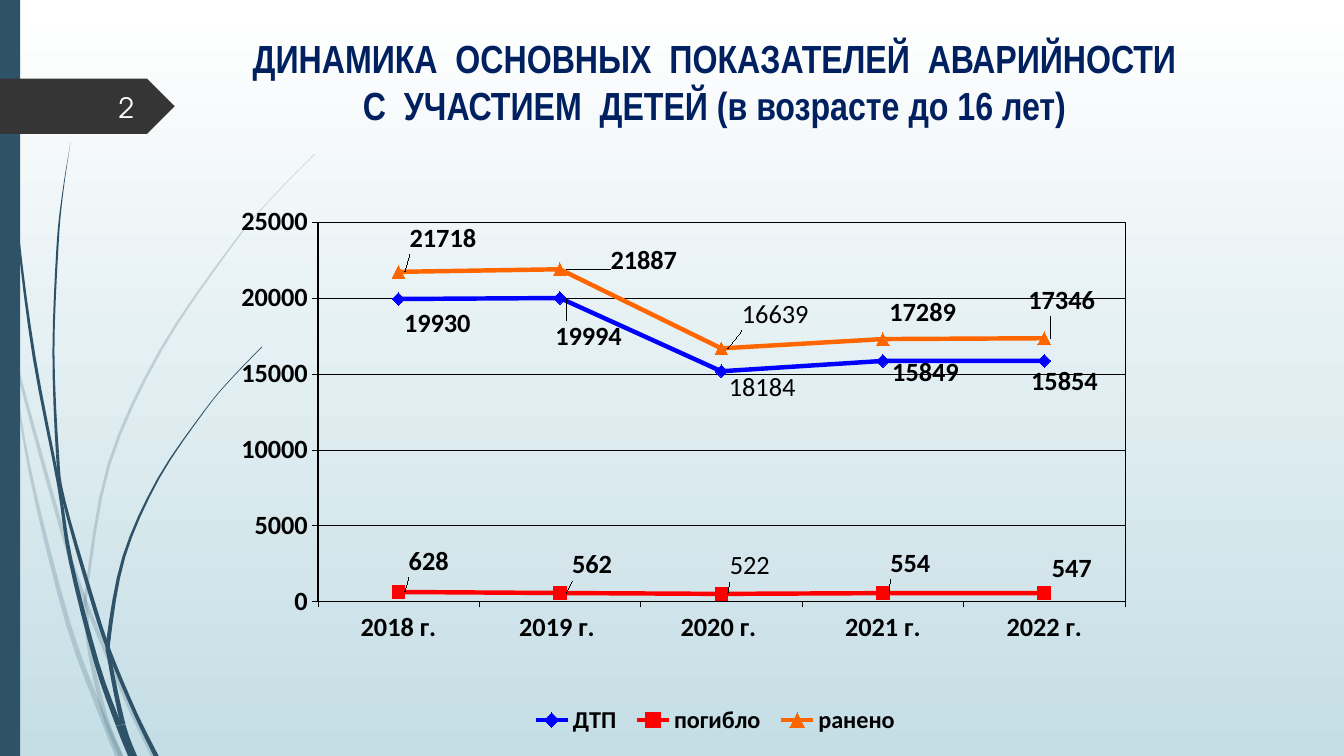
from lxml import etree
from pptx import Presentation
from pptx.chart.data import CategoryChartData
from pptx.dml.color import RGBColor
from pptx.enum.chart import XL_CHART_TYPE as ChartType, XL_LABEL_POSITION as LabelPosition
from pptx.enum.chart import XL_LEGEND_POSITION as LegendPosition, XL_MARKER_STYLE as Marker
from pptx.enum.chart import XL_TICK_MARK as TickMark
from pptx.enum.shapes import MSO_SHAPE as Shape
from pptx.enum.text import MSO_ANCHOR as Anchor, PP_ALIGN as Align
from pptx.oxml import parse_xml
from pptx.oxml.ns import nsdecls, qn
from pptx.util import Inches, Pt

WIDTH, HEIGHT = Inches(13.33), Inches(7.5)
CELL = Inches(1)  # grid cell for the curved stems
STEPS = 4  # straight pieces between two knots

WHITE = RGBColor(0xFF, 0xFF, 0xFF)
MIST = RGBColor(0xC5, 0xDE, 0xE5)
SLATE = RGBColor(0x2E, 0x53, 0x69)
CHARCOAL = RGBColor(0x35, 0x35, 0x35)
NAVY = RGBColor(0x00, 0x20, 0x60)
NEAR_WHITE = RGBColor(0xFE, 0xFF, 0xFF)
BLACK = RGBColor(0, 0, 0)
BLUE = RGBColor(0, 0, 0xFF)
RED = RGBColor(0xFF, 0, 0)
ORANGE = RGBColor(0xFF, 0x66, 0)

# Stems: knots where a piece ends, then (column, row, thickness) along the centre line
PALE_STEMS = [
    ((1, 3), [(0, 2.9, .04), (.13, 3.5, .03), (.6, 5.21, .04), (.86, 6, .04),
              (1.25, 6.93, .05), (1.52, 7.5, .05)]),
    ((3,), [(.11, 3.5, 0), (.3, 4.69, .03), (.68, 6.2, .05), (1.03, 7.14, .06),
            (1.18, 7.5, .08)]),
    ((5, 6, 8), [(3.12, 1.53, .01), (2.68, 1.98, .01), (2.29, 2.45, .02), (1.59, 3.48, .03),
                 (1.08, 4.61, .03), (.86, 5.84, .03), (.86, 6.1, .04), (.89, 6.46, .04),
                 (1.04, 7.1, .05), (1.2, 7.5, .05)]),
]
DARK_STEMS = [
    ((4, 7), [(.04, 0, .01), (.08, 1.1, .01), (.18, 2.33, .02), (.34, 3.55, .03),
              (.58, 4.8, .03), (.7, 5.56, .04), (.96, 6.58, .05), (1.18, 7.2, .06),
              (1.3, 7.5, .06)]),
    ((4, 5, 7), [(.7, 1.41, 0), (.62, 1.93, .01), (.57, 2.45, .02), (.53, 3.49, .02),
                 (.57, 4.5, .03), (.63, 4.95, .03), (.9, 5.9, .04), (1.08, 6.45, .04),
                 (1.34, 7.07, .04), (1.55, 7.5, .05)]),
    ((5, 6, 7), [(2.6, 3.44, .01), (2.31, 3.74, .01), (2.04, 4.06, .01), (1.57, 4.75, .02),
                 (1.23, 5.52, .03), (1.08, 6.32, .04), (1.09, 6.56, .04), (1.22, 7.19, .05),
                 (1.33, 7.5, .06)]),
]

YEARS = ["2018 г.", "2019 г. ", "2020 г. ", "2021 г.", "2022 г."]
RETYPED_YEAR = 2  # 2020 has typed labels in regular weight
# name, values, colour, marker, typed label, label shifts as shares of the chart
INDICATORS = [
    ("ДТП", (19930, 19994, 15170, 15849, 15854), BLUE, Marker.DIAMOND, "18184",
     [(-.005, .033), (-.016, .052), (-.003, .022), (-.001, .016), (-.025, .028)]),
    ("погибло", (628, 562, 502, 554, 547), RED, Marker.SQUARE, "522",
     [(0, -.041), (.002, -.038), (-.002, -.038), (-.003, -.04), (-.003, -.033)]),
    ("ранено", (21718, 21887, 16675, 17289, 17346), ORANGE, Marker.TRIANGLE, "16639",
     [(.001, -.045), (.043, -.012), (.011, -.046), (-.004, -.036), (-.028, -.051)]),
]


def place(left, top, width, height):
    """Turn shares of the slide into lengths."""
    return int(WIDTH * left), int(HEIGHT * top), int(WIDTH * width), int(HEIGHT * height)


def paint(shape, color, opacity=None):
    shape.shadow.inherit = False
    shape.fill.solid()
    shape.fill.fore_color.rgb = color
    shape.line.fill.background()
    if opacity:
        tint = shape.fill._xPr.find(".//" + qn("a:srgbClr"))
        etree.SubElement(tint, qn("a:alpha")).set("val", str(opacity * 1000))


def style_font(font, size, name, color, bold=False):
    font.size, font.name, font.bold = Pt(size), name, bold
    font.color.rgb = color


def smooth(knots):
    """Catmull-Rom curve through the knots."""
    ends = [knots[0], *knots, knots[-1]]
    curve = []
    for a, b, c, d in zip(ends, ends[1:], ends[2:], ends[3:]):
        for step in range(STEPS):
            t = step / STEPS
            curve.append([q + t * (r - p) / 2 + t * t * (2 * p - 5 * q + 4 * r - s) / 2
                          + t ** 3 * (3 * q - p - 3 * r + s) / 2
                          for p, q, r, s in zip(a, b, c, d)])
    return curve + [knots[-1]]


def add_stem(page, joints, knots, opacity=None):
    curve = smooth(knots)
    stops = [0, *joints, len(knots) - 1]
    for first, last in zip(stops, stops[1:]):
        piece = curve[first * STEPS:last * STEPS + 1]
        right = [(x + w / 2, y) for x, y, w in piece]
        left = [(max(x - w / 2, 0), y) for x, y, w in reversed(piece)]
        outline = [(int(x * CELL), int(y * CELL)) for x, y in right + left]
        builder = page.shapes.build_freeform(*outline[0])
        builder.add_line_segments(outline[1:], close=True)
        paint(builder.convert_to_shape(), SLATE, opacity)


def add_block(page, kind, area, color):
    paint(page.shapes.add_shape(kind, *place(*area)), color)


def add_text(page, area, text, align, anchor, **look):
    box = page.shapes.add_textbox(*place(*area))
    box.text_frame.word_wrap = True
    box.text_frame.vertical_anchor = anchor
    para = box.text_frame.paragraphs[0]
    para.text, para.alignment = text, align
    for run in para.runs:
        style_font(run.font, **look)


def manual_layout(x, y, width=None, height=None, target=""):
    """Shift an element, or fix its frame when a size is given."""
    mode = size = ""
    if width:
        mode = target + '<c:xMode val="edge"/><c:yMode val="edge"/>'
        size = f'<c:w val="{width}"/><c:h val="{height}"/>'
    return parse_xml(f'<c:layout {nsdecls("c")}><c:manualLayout>{mode}<c:x val="{x}"/>'
                     f'<c:y val="{y}"/>{size}</c:manualLayout></c:layout>')


def style_axis(axis):
    axis.major_tick_mark, axis.minor_tick_mark = TickMark.OUTSIDE, TickMark.NONE
    axis.format.line.color.rgb = BLACK
    axis.format.line.width = Pt(.25)
    style_font(axis.tick_labels.font, 18.8, "Calibri", BLACK, True)


def style_series(series, color, marker, typed_label, shifts):
    series.smooth = False
    series.format.line.color.rgb = color
    series.format.line.width = Pt(3.18)
    series.marker.style, series.marker.size = marker, 9
    series.marker.format.fill.solid()
    series.marker.format.fill.fore_color.rgb = color
    series.marker.format.line.color.rgb = color
    series.data_labels.show_value = True
    style_font(series.data_labels.font, 18.8, "Calibri", BLACK, True)
    for index in range(len(shifts)):
        label = series.points[index].data_label
        if index == RETYPED_YEAR:
            para = label.text_frame.paragraphs[0]
            para.text = typed_label
            style_font(para.runs[0].font, 18.8, "Calibri", BLACK)
        else:
            style_font(label.font, 18.8, "Calibri", BLACK, True)
        label.position = LabelPosition.RIGHT
    for label, shift in zip(series._element.iter(qn("c:dLbl")), shifts):
        label.insert(1, manual_layout(*shift))
    # No leader lines from the shifted labels
    series._element.find(qn("c:dLbls")).append(parse_xml(
        f'<c:extLst {nsdecls("c")}><c:ext uri="{{CE6537A1-D6FC-4f65-9D91-7224C49458BB}}" '
        'xmlns:c15="http://schemas.microsoft.com/office/drawing/2012/chart">'
        '<c15:showLeaderLines val="0"/></c:ext></c:extLst>'))


def fix_frames(chart):
    """Fix the plot area and the legend, and outline the plot."""
    area, legend = (chart._chartSpace.find(".//" + qn(tag)) for tag in ("c:plotArea", "c:legend"))
    for part in (area, legend):
        for layout in part.findall(qn("c:layout")):
            part.remove(layout)
    area.insert(0, manual_layout(.126, .292, .861, .513, '<c:layoutTarget val="inner"/>'))
    legend.insert(1, manual_layout(.345, .94, .41, .05))
    area.append(parse_xml(
        f'<c:spPr {nsdecls("c", "a")}><a:noFill/><a:ln w="9525"><a:solidFill>'
        f'<a:srgbClr val="{BLACK}"/></a:solidFill></a:ln></c:spPr>'))


def add_indicator_chart(page, area):
    data = CategoryChartData()
    data.categories = YEARS
    for name, values, *_ in INDICATORS:
        data.add_series(name, values)
    chart = page.shapes.add_chart(ChartType.LINE_MARKERS, *place(*area), data).chart
    chart.has_title = False
    style_font(chart.font, 18.8, "Calibri", BLACK, True)
    chart.plots[0].vary_by_categories = False
    for series, (_, _, *look) in zip(chart.plots[0].series, INDICATORS):
        style_series(series, *look)
    style_axis(chart.category_axis)
    scale = chart.value_axis
    style_axis(scale)
    scale.minimum_scale, scale.maximum_scale, scale.major_unit = 0, 25000, 5000
    scale.major_gridlines.format.line.color.rgb = BLACK
    scale.major_gridlines.format.line.width = Pt(.25)
    chart.has_legend = True
    chart.legend.position = LegendPosition.BOTTOM
    chart.legend.include_in_layout = False
    style_font(chart.legend.font, 17.3, "Calibri", BLACK, True)
    fix_frames(chart)


def add_background(page):
    fill = page.background.fill
    fill.gradient()
    fill.gradient_angle = 270
    for stop, color, position in zip(fill.gradient_stops, (WHITE, MIST), (0, 1)):
        stop.color.rgb, stop.position = color, position


def main():
    deck = Presentation()
    deck.slide_width, deck.slide_height = WIDTH, HEIGHT
    page = deck.slides.add_slide(deck.slide_layouts[6])
    # Backdrop
    add_background(page)
    for stems, opacity in ((PALE_STEMS, 20), (DARK_STEMS, None)):
        for joints, knots in stems:
            add_stem(page, joints, knots, opacity)
    add_block(page, Shape.RECTANGLE, (0, 0, .015, 1), SLATE)
    add_block(page, Shape.PENTAGON, (0, .104, .13, .073), CHARCOAL)
    # Content
    add_indicator_chart(page, (.1485, .008, .6977, .9787))
    add_text(page, (.0615, .0387, .94, .139),
             "ДИНАМИКА  ОСНОВНЫХ  ПОКАЗАТЕЛЕЙ  АВАРИЙНОСТИ\v"
             "С  УЧАСТИЕМ  ДЕТЕЙ (в возрасте до 16 лет)",
             Align.CENTER, Anchor.TOP, size=28, name="Arial Narrow", color=NAVY, bold=True)
    add_text(page, (.0435, .115, .0638, .053), "2", Align.RIGHT, Anchor.MIDDLE,
             size=20, name="TeX Gyre Adventor", color=NEAR_WHITE)
    deck.save("out.pptx")


if __name__ == "__main__":
    main()
